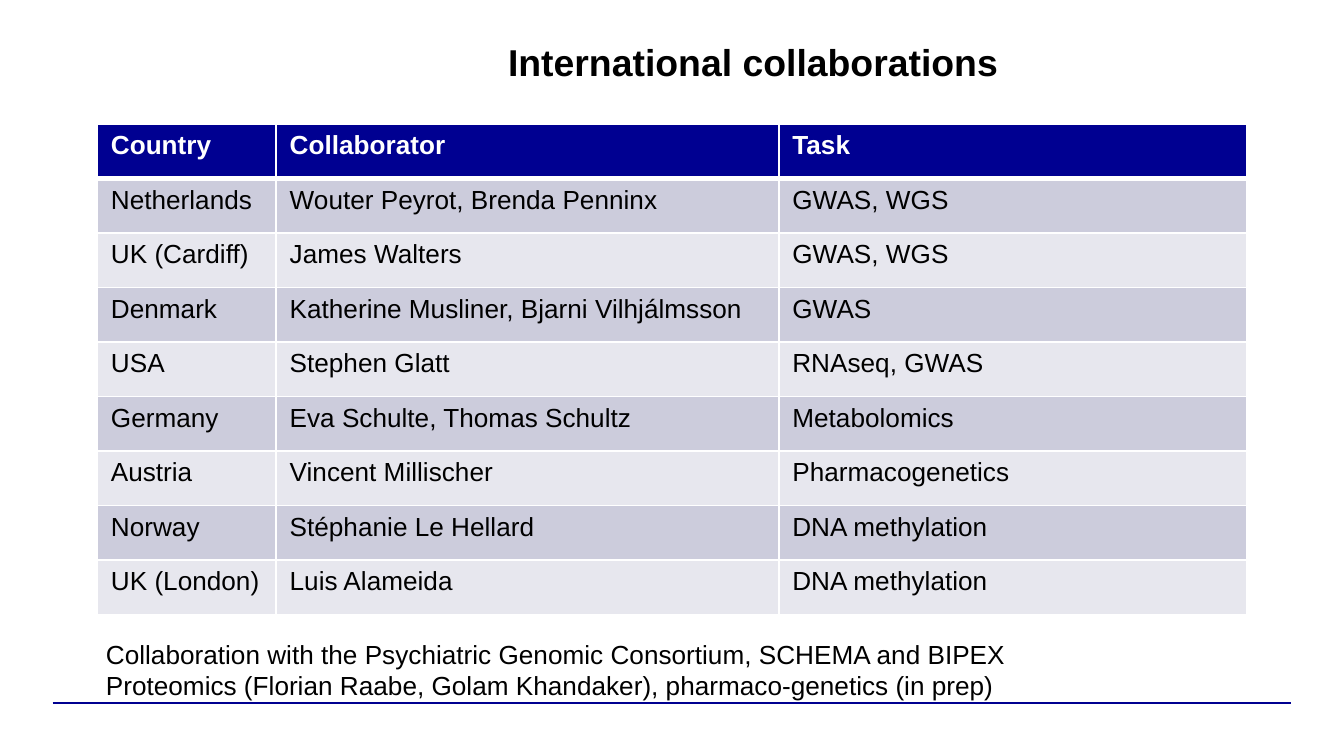
from typing import Any, NamedTuple

from lxml import etree
from pptx import Presentation
from pptx import util as u
from pptx.dml.color import RGBColor
from pptx.enum import shapes, text
from pptx.oxml import ns

Pt = u.Pt
NAVY = RGBColor(0x00, 0x00, 0x91)
WHITE = RGBColor(0xFF, 0xFF, 0xFF)
BLACK = RGBColor(0x00, 0x00, 0x00)
BAND_DARK = RGBColor(0xCC, 0xCC, 0xDC)
BAND_LIGHT = RGBColor(0xE7, 0xE7, 0xEE)

TITLE_FONT = {"name": "Arial", "size": Pt(20), "bold": True}
HEADER_FONT = {"name": "Arial", "size": Pt(14), "bold": True}
BODY_FONT = {"name": "Arial", "size": Pt(14), "bold": False}
NO_MARGINS = {f"margin_{side}": 0 for side in ("left", "top", "right", "bottom")}

COLUMN_WIDTHS = (95.8, 269.3, 250.6)
ROW_HEIGHT = 29.2


class Box(NamedTuple):
    left: float
    top: float
    width: float
    height: float

    def lengths(self) -> list[int]:
        return [Pt(value) for value in self]


class Collaboration(NamedTuple):
    country: str
    collaborator: str
    task: str


HEADER = Collaboration("Country", "Collaborator", "Task")
COLLABORATIONS = (
    Collaboration("Netherlands", "Wouter Peyrot, Brenda Penninx", "GWAS, WGS"),
    Collaboration("UK (Cardiff)", "James Walters", "GWAS, WGS"),
    Collaboration("Denmark", "Katherine Musliner, Bjarni Vilhjálmsson", "GWAS"),
    Collaboration("USA", "Stephen Glatt", "RNAseq, GWAS"),
    Collaboration("Germany", "Eva Schulte, Thomas Schultz", "Metabolomics"),
    Collaboration("Austria", "Vincent Millischer", "Pharmacogenetics"),
    Collaboration("Norway", "Stéphanie Le Hellard", "DNA methylation"),
    Collaboration("UK (London)", "Luis Alameida", "DNA methylation"),
)
NOTES = (
    "Collaboration with the Psychiatric Genomic Consortium, SCHEMA and BIPEX",
    "Proteomics (Florian Raabe, Golam Khandaker), pharmaco-genetics (in prep)",
)


def apply_format(target: Any, values: dict[str, Any]) -> None:
    for name, value in values.items():
        setattr(target, name, value)


def write_lines(frame: Any, lines: tuple[str, ...], font: dict[str, Any],
                color: RGBColor) -> None:
    frame.text = "\n".join(lines)
    for paragraph in frame.paragraphs:
        apply_format(paragraph.font, font)
        paragraph.font.color.rgb = color


def set_borders(cell: Any, bottom: float, top: float) -> None:
    properties = cell._tc.get_or_add_tcPr()
    widths = {"a:lnL": 1, "a:lnR": 1, "a:lnT": top, "a:lnB": bottom}
    for position, (tag, width) in enumerate(widths.items()):
        border = etree.Element(ns.qn(tag), w=str(Pt(width)))
        fill = etree.SubElement(border, ns.qn("a:solidFill"))
        etree.SubElement(fill, ns.qn("a:srgbClr"), val=str(WHITE))
        properties.insert(position, border)


def add_rule(slide: Any, left: float, right: float, top: float) -> None:
    rule = slide.shapes.add_connector(
        shapes.MSO_CONNECTOR.STRAIGHT, Pt(left), Pt(top), Pt(right), Pt(top))
    rule.line.color.rgb = NAVY
    rule.line.width = Pt(0.75)
    etree.SubElement(rule._element.spPr, ns.qn("a:effectLst"))


def add_text(slide: Any, box: Box, lines: tuple[str, ...], font: dict[str, Any]) -> Any:
    frame = slide.shapes.add_textbox(*box.lengths()).text_frame
    frame.word_wrap = True
    write_lines(frame, lines, font, BLACK)
    return frame


def add_collaboration_table(slide: Any, left: float, top: float) -> None:
    rows = (HEADER, *COLLABORATIONS)
    box = Box(left, top, sum(COLUMN_WIDTHS), ROW_HEIGHT * len(rows))
    table = slide.shapes.add_table(
        len(rows), len(COLUMN_WIDTHS), *box.lengths()).table
    for column, width in zip(table.columns, COLUMN_WIDTHS):
        column.width = Pt(width)
    for index, row in enumerate(rows):
        is_header = index == 0
        band = NAVY if is_header else (BAND_LIGHT, BAND_DARK)[index % 2]
        for column_index, value in enumerate(row):
            cell = table.cell(index, column_index)
            cell.fill.solid()
            cell.fill.fore_color.rgb = band
            set_borders(cell, bottom=3 if is_header else 1, top=3 if index == 1 else 1)
            write_lines(cell.text_frame, (value,),
                        HEADER_FONT if is_header else BODY_FONT,
                        WHITE if is_header else BLACK)


def main() -> None:
    presentation = Presentation()
    presentation.slide_width = Pt(720)
    presentation.slide_height = Pt(405)
    slide = presentation.slides.add_slide(presentation.slide_layouts[6])

    # Footer rule
    add_rule(slide, 28.2, 691.8, 376.7)

    # Title
    title = add_text(slide, Box(72, 23.8, 663.1, 42.5),
                     ("International collaborations",), TITLE_FONT)
    apply_format(title, NO_MARGINS)
    apply_format(title.paragraphs[0],
                 {"alignment": text.PP_ALIGN.CENTER, "line_spacing": 0.9})

    # Collaborators by country
    add_collaboration_table(slide, 52.2, 66.5)

    # Further collaborations
    notes = add_text(slide, Box(49.7, 338.4, 616.3, 41), NOTES, BODY_FONT)
    notes.auto_size = text.MSO_AUTO_SIZE.SHAPE_TO_FIT_TEXT

    presentation.save("out.pptx")


if __name__ == "__main__":
    main()
